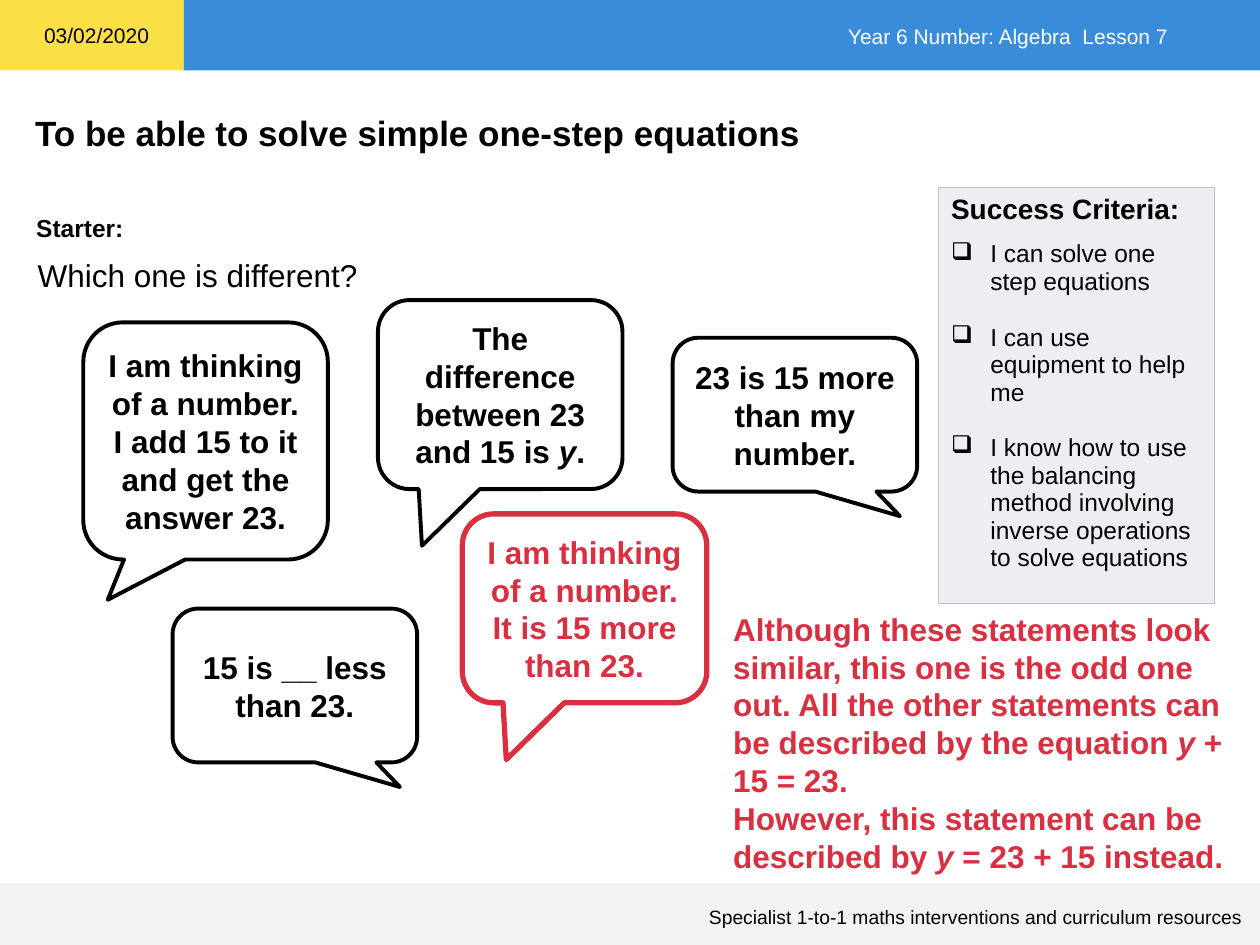
from typing import NamedTuple

from lxml.etree import SubElement
from pptx import Presentation
from pptx.dml.color import RGBColor
from pptx.enum.shapes import MSO_SHAPE
from pptx.enum.text import MSO_ANCHOR, PP_ALIGN
from pptx.oxml.ns import qn
from pptx.util import Cm, Pt

BLACK = RGBColor(0x00, 0x00, 0x00)
WHITE = RGBColor(0xFF, 0xFF, 0xFF)
RED = RGBColor(0xDA, 0x2E, 0x41)
BLUE = RGBColor(0x38, 0x8C, 0xDA)
YELLOW = RGBColor(0xFA, 0xDF, 0x47)
PALE = RGBColor(0xF2, 0xF2, 0xF2)
PANEL = RGBColor(0xEC, 0xEE, 0xF1)
EDGE = "BFBFBF"


class Box(NamedTuple):
    left: float
    top: float
    width: float
    height: float

    def place(self) -> tuple:
        return tuple(Cm(side) for side in self)


class Style(NamedTuple):
    size: float
    color: RGBColor = BLACK
    bold: bool = False
    align: PP_ALIGN = PP_ALIGN.LEFT


class Label(NamedTuple):
    box: Box
    lines: list[str]
    style: Style
    wrap: bool = True
    anchor: MSO_ANCHOR = MSO_ANCHOR.TOP


class Tail(NamedTuple):
    across: float
    down: float


class Bubble(NamedTuple):
    left: float
    top: float
    height: float
    tail: Tail
    lines: list[str]
    color: RGBColor = BLACK
    weight: float = 2.25


LEFT = Tail(-0.4, 0.67)
LONG = Tail(-0.32, 0.8)
RIGHT = Tail(0.43, 0.66)
WIDTH = 4.93

BANDS = [
    (Box(0, 0, 3.71, 1.42), YELLOW),
    (Box(3.71, 0, 21.69, 1.42), BLUE),
    (Box(0, 17.81, 25.4, 1.24), PALE),
]

LABELS = [
    Label(Box(12.7, 0.3, 11.1, 0.86), ["Year 6 Number: Algebra  Lesson 7"],
          Style(12, WHITE, align=PP_ALIGN.RIGHT), anchor=MSO_ANCHOR.MIDDLE),
    Label(Box(1.07, 18.03, 24.23, 0.91),
          ["Specialist 1-to-1 maths interventions and curriculum resources"],
          Style(11, align=PP_ALIGN.RIGHT), anchor=MSO_ANCHOR.MIDDLE),
    Label(Box(0.46, 2.13, 24.82, 1.12),
          ["To be able to solve simple one-step equations"], Style(20, bold=True)),
    Label(Box(0.64, 0.33, 2.64, 0.76), ["03/02/2020"], Style(12), wrap=False),
    Label(Box(0.48, 4.17, 2.29, 0.86), ["Starter:"], Style(14, bold=True), wrap=False),
    Label(Box(0.51, 5.03, 17.8, 1.02), ["Which one is different?"], Style(18)),
    Label(Box(14.53, 12.17, 10.54, 5.64),
          ["Although these statements look similar, this one is the odd one out. "
           "All the other statements can be described by the equation *y* + 15 = 23.",
           "However, this statement can be described by *y* = 23 + 15 instead."],
          Style(18, RED, True)),
]

BUBBLES = [
    Bubble(1.68, 6.5, 4.78, LEFT,
           ["I am thinking of a number.", "I add 15 to it and get the answer 23."]),
    Bubble(13.56, 6.81, 3.1, RIGHT, ["23 is 15 more than my number."]),
    Bubble(3.48, 12.27, 3.1, RIGHT, ["15 is __ less", "than 23."]),
    Bubble(9.32, 10.36, 3.81, LONG,
           ["I am thinking of a number.", "It is 15 more than 23."], RED, 3),
    Bubble(7.62, 6.05, 3.81, LONG, ["The difference between 23 and 15 is *y*."]),
]

GOALS = [
    "I can solve one step equations",
    "I can use equipment to help me",
    "I know how to use the balancing method involving inverse operations to solve equations",
]


def write(para, line: str, style: Style) -> None:
    para.alignment = style.align
    for index, piece in enumerate(line.split("*")):
        run = para.add_run()
        run.text = piece
        font = run.font
        font.name = "Arial"
        font.size = Pt(style.size)
        font.bold = style.bold
        font.italic = index % 2 == 1
        font.color.rgb = style.color


def fill_text(frame, lines: list[str], style: Style) -> None:
    frame.word_wrap = True
    for index, line in enumerate(lines):
        para = frame.add_paragraph() if index else frame.paragraphs[0]
        write(para, line, style)


def draw_band(slide, box: Box, color: RGBColor) -> None:
    band = slide.shapes.add_shape(MSO_SHAPE.RECTANGLE, *box.place())
    band.shadow.inherit = False
    band.fill.solid()
    band.fill.fore_color.rgb = color
    band.line.fill.background()


def draw_label(slide, label: Label) -> None:
    frame = slide.shapes.add_textbox(*label.box.place()).text_frame
    fill_text(frame, label.lines, label.style)
    frame.word_wrap = label.wrap
    frame.vertical_anchor = label.anchor


def draw_bubble(slide, bubble: Bubble) -> None:
    box = Box(bubble.left, bubble.top, WIDTH, bubble.height)
    shape = slide.shapes.add_shape(MSO_SHAPE.ROUNDED_RECTANGULAR_CALLOUT, *box.place())
    shape.adjustments[0] = bubble.tail.across
    shape.adjustments[1] = bubble.tail.down
    shape.shadow.inherit = False
    shape.fill.solid()
    shape.fill.fore_color.rgb = WHITE
    shape.line.color.rgb = bubble.color
    shape.line.width = Pt(bubble.weight)
    shape.text_frame.vertical_anchor = MSO_ANCHOR.MIDDLE
    fill_text(shape.text_frame, bubble.lines,
              Style(18, bubble.color, True, PP_ALIGN.CENTER))


def add_bullet(para) -> None:
    props = para._p.get_or_add_pPr()
    props.set("marL", str(Cm(0.79)))
    props.set("indent", str(-Cm(0.79)))
    SubElement(props, qn("a:buChar"), char="❑")


def add_edges(cell) -> None:
    props = cell._tc.get_or_add_tcPr()
    for index, side in enumerate(("lnL", "lnR", "lnT", "lnB")):
        line = props.makeelement(qn(f"a:{side}"), {"w": str(Pt(0.75))})
        solid = SubElement(line, qn("a:solidFill"))
        SubElement(solid, qn("a:srgbClr"), val=EDGE)
        props.insert(index, line)


def draw_goals(slide, box: Box) -> None:
    table = slide.shapes.add_table(1, 1, *box.place()).table
    cell = table.cell(0, 0)
    cell.fill.solid()
    cell.fill.fore_color.rgb = PANEL
    add_edges(cell)
    frame = cell.text_frame
    write(frame.paragraphs[0], "Success Criteria:", Style(16, bold=True))
    for index, goal in enumerate(GOALS):
        para = frame.add_paragraph()
        add_bullet(para)
        para.space_before = Pt(16 if index else 9)
        write(para, goal, Style(14))


def main() -> None:
    deck = Presentation()
    deck.slide_width, deck.slide_height = Cm(25.4), Cm(19.05)
    slide = deck.slides.add_slide(deck.slide_layouts[6])
    for box, color in BANDS:
        draw_band(slide, box, color)
    for label in LABELS:
        draw_label(slide, label)
    for bubble in BUBBLES:
        draw_bubble(slide, bubble)
    draw_goals(slide, Box(18.92, 3.78, 5.56, 8.38))
    deck.save("out.pptx")


if __name__ == "__main__":
    main()
